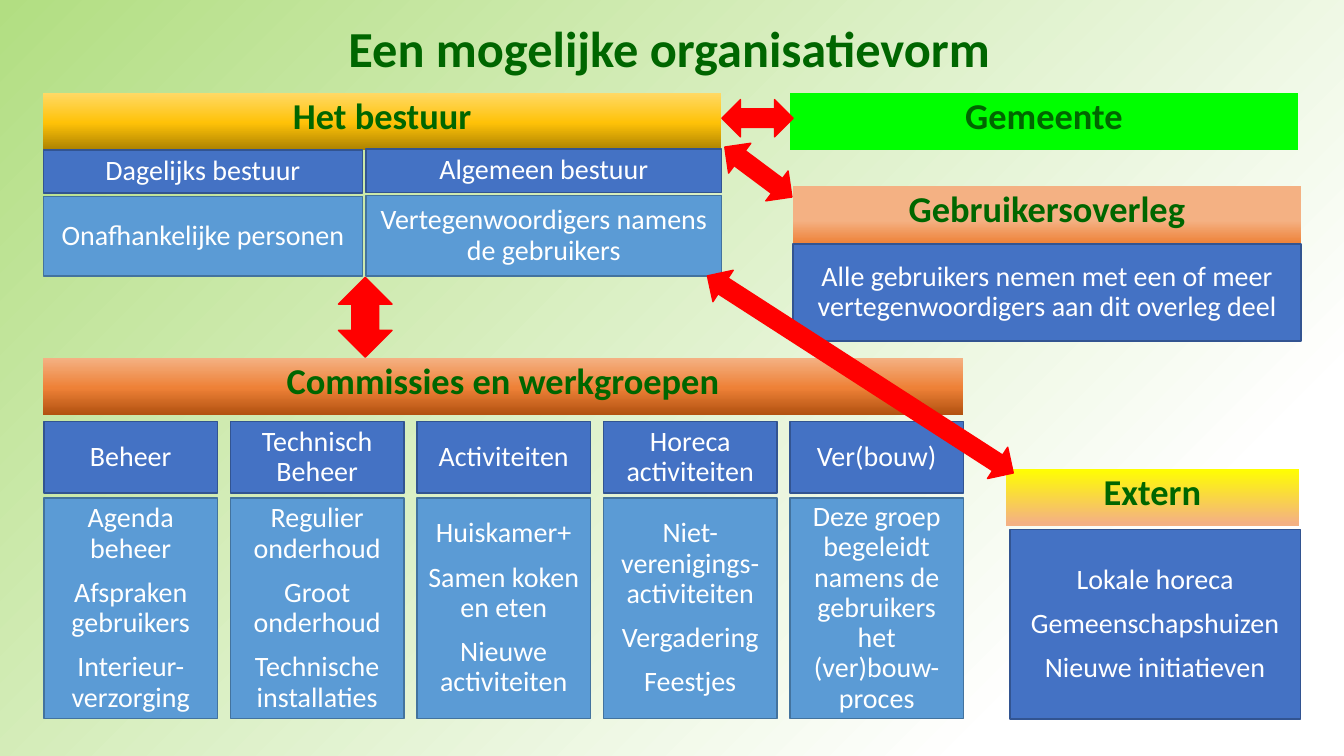
from dataclasses import dataclass
from typing import NamedTuple

from lxml import etree
from pptx import Presentation
from pptx.dml.color import RGBColor
from pptx.dml.fill import FillFormat
from pptx.enum.shapes import MSO_SHAPE
from pptx.enum.text import MSO_ANCHOR, PP_ALIGN
from pptx.oxml.ns import qn
from pptx.shapes.autoshape import Shape
from pptx.slide import Slide
from pptx.util import Cm, Pt

RECTANGLE = MSO_SHAPE.RECTANGLE
DOUBLE_ARROW = MSO_SHAPE.UP_DOWN_ARROW
CENTER = PP_ALIGN.CENTER
TOP = MSO_ANCHOR.TOP
MIDDLE = MSO_ANCHOR.MIDDLE
BLANK_LAYOUT = 6


class Gradient(NamedTuple):
    stops: tuple[tuple[int, str], ...]
    angle: int = 90


class BoxColors(NamedTuple):
    fill: str
    line: str


@dataclass(frozen=True)
class Theme:
    font: str = "Calibri"
    title_size: int = 36
    heading_size: int = 26
    body_size: int = 20
    heading_color: str = "006600"
    body_color: str = "FFFFFF"
    arrow_color: str = "FF0000"
    dark: BoxColors = BoxColors("4472C4", "325491")
    light: BoxColors = BoxColors("5B9BD5", "43739E")
    background: Gradient = Gradient(
        ((0, "B2DE82"), (82, "FFFFFF"), (100, "FFFFFF"), (100, "CFCFCF")), 315)
    gold: Gradient = Gradient(((0, "AB8100"), (48, "FFC208"), (100, "FFD966")))
    orange: Gradient = Gradient(((0, "B0500F"), (48, "EE8137"), (100, "F4B183")))
    peach: Gradient = Gradient(((0, "B0500F"), (0, "EE8137"), (41, "F4B183")))
    green: Gradient = Gradient(((0, "00FF00"), (100, "00FF00"), (100, "FFFF00")))
    yellow: Gradient = Gradient(((5, "F4B183"), (100, "FFFF00"), (100, "EE8137")))


class Area(NamedTuple):
    """Position and size in centimetres."""
    left: float
    top: float
    width: float
    height: float

    def lengths(self) -> tuple[Cm, ...]:
        return tuple(Cm(value) for value in self)


class Heading(NamedTuple):
    text: str
    left: float
    top: float
    width: float
    gradient: Gradient


class Box(NamedTuple):
    area: Area
    colors: BoxColors
    lines: tuple[str, ...]


class Committee(NamedTuple):
    name: str
    tasks: tuple[str, ...]


class Arrow(NamedTuple):
    area: Area
    rotation: float = 0


THEME = Theme()
HEADING_HEIGHT = 1.45
COMMITTEE_LEFT, COMMITTEE_PITCH, COMMITTEE_WIDTH = 1.11, 4.7, 4.37

HEADINGS = (
    Heading("Het bestuur", 1.09, 2.34, 17.09, THEME.gold),
    Heading("Gemeente", 19.91, 2.34, 12.8, THEME.green),
    Heading("Gebruikersoverleg", 19.99, 4.7, 12.8, THEME.peach),
    Heading("Commissies en werkgroepen", 1.09, 9.02, 23.19, THEME.orange),
    Heading("Extern", 25.35, 11.81, 7.39, THEME.yellow),
)
BOXES = (
    Box(Area(1.09, 3.78, 8.05, 1.09), THEME.dark, ("Dagelijks bestuur",)),
    Box(Area(9.22, 3.76, 8.97, 1.09), THEME.dark, ("Algemeen bestuur",)),
    Box(Area(1.09, 4.95, 8.05, 2.01), THEME.light, ("Onafhankelijke personen",)),
    Box(Area(9.22, 4.93, 8.97, 2.03), THEME.light,
        ("Vertegenwoordigers namens de gebruikers",)),
    Box(Area(19.99, 6.15, 12.8, 2.44), THEME.dark,
        ("Alle gebruikers nemen met een of meer vertegenwoordigers aan dit overleg deel",)),
    Box(Area(25.45, 13.34, 7.32, 4.78), THEME.dark,
        ("Lokale horeca", "Gemeenschapshuizen", "Nieuwe initiatieven")),
)
COMMITTEES = (
    Committee("Beheer", ("Agenda beheer", "Afspraken gebruikers", "Interieur-verzorging")),
    Committee("Technisch Beheer",
              ("Regulier onderhoud", "Groot onderhoud", "Technische installaties")),
    Committee("Activiteiten", ("Huiskamer+", "Samen koken en eten", "Nieuwe activiteiten")),
    Committee("Horeca activiteiten",
              ("Niet-verenigings-activiteiten", "Vergadering", "Feestjes")),
    Committee("Ver(bouw)",
              ("Deze groep begeleidt namens de gebruikers het (ver)bouw-proces",)),
)
ARROWS = (
    Arrow(Area(8.53, 6.99, 1.35, 2.01)),
    Arrow(Area(18.64, 3.28, 0.94, 2.11), 126.7),
    Arrow(Area(18.62, 2.08, 0.94, 1.8), 90),
    Arrow(Area(21.21, 4.85, 0.94, 9.17), 122.8),
)


def paint_gradient(fill: FillFormat, owner: etree.ElementBase, gradient: Gradient) -> None:
    """Give the fill inside the owner element any number of gradient stops."""
    fill.gradient()
    fill.gradient_angle = gradient.angle
    stop_list = owner.find(".//" + qn("a:gsLst"))
    for old_stop in list(stop_list):
        stop_list.remove(old_stop)
    for percent, color in gradient.stops:
        stop = etree.SubElement(stop_list, qn("a:gs"), pos=str(percent * 1000))
        etree.SubElement(stop, qn("a:srgbClr"), val=color)


def write_text(shape: Shape, text: str, size: int, color: str,
               bold: bool, anchor: MSO_ANCHOR) -> None:
    frame = shape.text_frame
    frame.text = text
    frame.word_wrap = True
    frame.vertical_anchor = anchor
    for para in frame.paragraphs:
        para.alignment = CENTER
        para.line_spacing = 0.9
        para.space_before = Pt(10)
        for span in para.runs:
            span.font.name = THEME.font
            span.font.size = Pt(size)
            span.font.bold = bold
            span.font.color.rgb = RGBColor.from_string(color)


def paint_solid(shape: Shape, colors: BoxColors) -> None:
    shape.shadow.inherit = False
    shape.fill.solid()
    shape.fill.fore_color.rgb = RGBColor.from_string(colors.fill)
    shape.line.color.rgb = RGBColor.from_string(colors.line)
    shape.line.width = Pt(1)


def draw_title(page: Slide, text: str) -> None:
    title = page.shapes.add_textbox(*Area(1.02, 0.48, 31.7, 1.83).lengths())
    write_text(title, text, THEME.title_size, THEME.heading_color, True, TOP)


def draw_heading(page: Slide, heading: Heading) -> None:
    area = Area(heading.left, heading.top, heading.width, HEADING_HEIGHT)
    shape = page.shapes.add_shape(RECTANGLE, *area.lengths())
    shape.shadow.inherit = False
    paint_gradient(shape.fill, shape.element, heading.gradient)
    shape.line.fill.background()
    write_text(shape, heading.text, THEME.heading_size, THEME.heading_color, True, TOP)


def draw_box(page: Slide, box: Box) -> None:
    shape = page.shapes.add_shape(RECTANGLE, *box.area.lengths())
    paint_solid(shape, box.colors)
    write_text(shape, "\n".join(box.lines), THEME.body_size, THEME.body_color, False, MIDDLE)


def draw_committee(page: Slide, index: int, committee: Committee) -> None:
    left = COMMITTEE_LEFT + index * COMMITTEE_PITCH
    draw_box(page, Box(Area(left, 10.62, COMMITTEE_WIDTH, 1.8), THEME.dark, (committee.name,)))
    draw_box(page, Box(Area(left, 12.55, COMMITTEE_WIDTH, 5.56), THEME.light, committee.tasks))


def draw_arrow(page: Slide, arrow: Arrow) -> None:
    shape = page.shapes.add_shape(DOUBLE_ARROW, *arrow.area.lengths())
    shape.rotation = arrow.rotation
    paint_solid(shape, BoxColors(THEME.arrow_color, THEME.arrow_color))


def main() -> None:
    deck = Presentation()
    deck.slide_width, deck.slide_height = Cm(33.87), Cm(19.05)
    page = deck.slides.add_slide(deck.slide_layouts[BLANK_LAYOUT])
    paint_gradient(page.background.fill, page.element, THEME.background)
    draw_title(page, "Een mogelijke organisatievorm")
    for heading in HEADINGS:
        draw_heading(page, heading)
    for box in BOXES:
        draw_box(page, box)
    for index, committee in enumerate(COMMITTEES):
        draw_committee(page, index, committee)
    for arrow in ARROWS:
        draw_arrow(page, arrow)
    deck.save("out.pptx")


if __name__ == "__main__":
    main()
